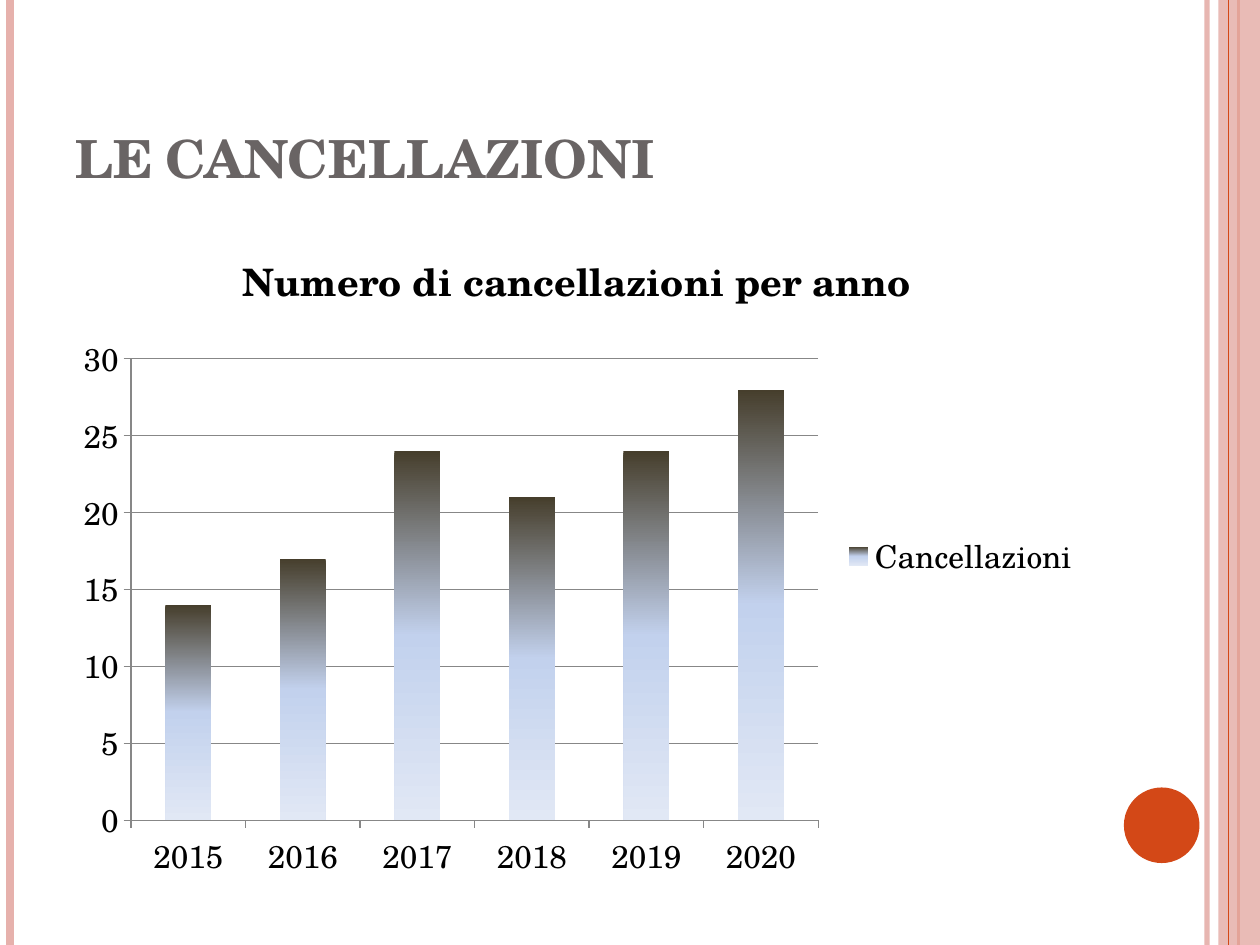
from lxml import etree
from pptx import Presentation
from pptx.chart.data import CategoryChartData
from pptx.dml.color import RGBColor
from pptx.enum.chart import XL_CHART_TYPE, XL_LEGEND_POSITION, XL_TICK_MARK
from pptx.enum.shapes import MSO_CONNECTOR, MSO_SHAPE
from pptx.enum.text import MSO_ANCHOR, PP_ALIGN
from pptx.oxml import parse_xml
from pptx.oxml.ns import nsdecls, qn
from pptx.util import Inches, Pt

COLUMNS = XL_CHART_TYPE.COLUMN_CLUSTERED
LEGEND_RIGHT = XL_LEGEND_POSITION.RIGHT
TICK_OUT = XL_TICK_MARK.OUTSIDE
STRAIGHT = MSO_CONNECTOR.STRAIGHT

# Content
FONT = "TeX Gyre Schola"
COLORS = {"pink": "E6B1AC", "orange": "D34817", "title": "696464",
          "text": "000000", "axis": "878787"}
TITLE = "LE CANCELLAZIONI"
CHART_TITLE = "Numero di cancellazioni per anno"
SERIES_NAME = "Cancellazioni"
CANCELLATIONS = {"2015": 14, "2016": 17, "2017": 24,
                 "2018": 21, "2019": 24, "2020": 28}
BAR_GRADIENT = [(0, "463E2C"), (50, "C2D1ED"), (100, "E1E8F5")]

# Vertical stripes: x, colour, width in points, opacity in percent
STRIPES_BEHIND = [(9.58, "pink", 3, 93), (0.08, "pink", 4.5, 100),
                  (9.83, "orange", 1.5, 100)]
STRIPES_FRONT = [(9.75, "orange", 0.75, 100)]
WIDTH, HEIGHT = 10, 7.5
BAND_LEFT = 9.67
LEFT, CONTENT_WIDTH = 0.5, 8.17


def rgb(name):
    return RGBColor.from_string(COLORS[name])


def set_opacity(element, percent):
    color = next(element.iter(qn("a:srgbClr")))
    etree.SubElement(color, qn("a:alpha")).set("val", str(percent * 1000))


def add_stripes(slide, stripes):
    for x, color, width, opacity in stripes:
        stripe = slide.shapes.add_connector(
            STRAIGHT, Inches(x), 0, Inches(x), Inches(HEIGHT))
        stripe.line.color.rgb = rgb(color)
        stripe.line.width = Pt(width)
        properties = stripe._element.spPr
        if opacity < 100:
            set_opacity(properties, opacity)
        etree.SubElement(properties, qn("a:effectLst"))


def add_plain_shape(slide, preset, box, color):
    shape = slide.shapes.add_shape(preset, *map(Inches, box))
    shape.shadow.inherit = False
    shape.fill.solid()
    shape.fill.fore_color.rgb = rgb(color)
    shape.line.fill.background()
    return shape


def add_decoration(slide):
    add_stripes(slide, STRIPES_BEHIND)
    band = add_plain_shape(slide, MSO_SHAPE.RECTANGLE,
                           (BAND_LEFT, 0, WIDTH - BAND_LEFT, HEIGHT), "pink")
    set_opacity(band._element.spPr, 87)
    add_stripes(slide, STRIPES_FRONT)
    add_plain_shape(slide, MSO_SHAPE.OVAL, (8.92, 6.25, 0.6, 0.6), "orange")


def format_title(title):
    title.left, title.top = Inches(LEFT), Inches(0.3)
    title.width, title.height = Inches(CONTENT_WIDTH), Inches(1.25)
    frame = title.text_frame
    frame.text = TITLE
    frame.vertical_anchor = MSO_ANCHOR.BOTTOM
    paragraph = frame.paragraphs[0]
    paragraph.alignment = PP_ALIGN.LEFT
    font = paragraph.runs[0].font
    font.name, font.size, font.bold = FONT, Pt(30), True
    font.color.rgb = rgb("title")
    font._element.set("cap", "small")


def fill_gradient(series):
    stops = "".join(
        f'<a:gs pos="{position * 1000}"><a:srgbClr val="{color}"/></a:gs>'
        for position, color in BAR_GRADIENT)
    gradient = parse_xml(
        f'<a:gradFill {nsdecls("a")} rotWithShape="1"><a:gsLst>{stops}</a:gsLst>'
        '<a:lin ang="5400000" scaled="0"/></a:gradFill>')
    series.format.fill.background()
    properties = series._element.spPr
    properties.replace(properties.find(qn("a:noFill")), gradient)


def add_cancellations_chart(slide):
    data = CategoryChartData()
    data.categories = list(CANCELLATIONS)
    data.add_series(SERIES_NAME, list(CANCELLATIONS.values()))
    chart = slide.shapes.add_chart(
        COLUMNS, Inches(LEFT), Inches(1.75), Inches(CONTENT_WIDTH),
        Inches(5.33), data).chart
    chart.font.name, chart.font.size = FONT, Pt(18)
    chart.font.color.rgb = rgb("text")

    # Chart title and legend
    heading = chart.chart_title.text_frame
    heading.text = CHART_TITLE
    font = heading.paragraphs[0].runs[0].font
    font.name, font.size, font.bold = FONT, Pt(21.6), True
    font.color.rgb = rgb("text")
    chart.has_legend = True
    chart.legend.position = LEGEND_RIGHT
    chart.legend.include_in_layout = False

    # Axes and gridlines
    value_axis = chart.value_axis
    value_axis.minimum_scale, value_axis.maximum_scale = 0, 30
    value_axis.major_unit = 5
    value_axis.has_major_gridlines = True
    for axis in (chart.category_axis, value_axis):
        axis.major_tick_mark = TICK_OUT
    for part in (chart.category_axis, value_axis, value_axis.major_gridlines):
        part.format.line.color.rgb = rgb("axis")
        part.format.line.width = Pt(0.75)

    # Bars
    plot = chart.plots[0]
    plot.gap_width = 150
    plot.vary_by_categories = False
    fill_gradient(plot.series[0])


def main():
    presentation = Presentation()
    presentation.slide_width = Inches(WIDTH)
    presentation.slide_height = Inches(HEIGHT)
    slide = presentation.slides.add_slide(presentation.slide_layouts[5])
    add_decoration(slide)
    format_title(slide.shapes.title)
    add_cancellations_chart(slide)
    presentation.save("out.pptx")


if __name__ == "__main__":
    main()
